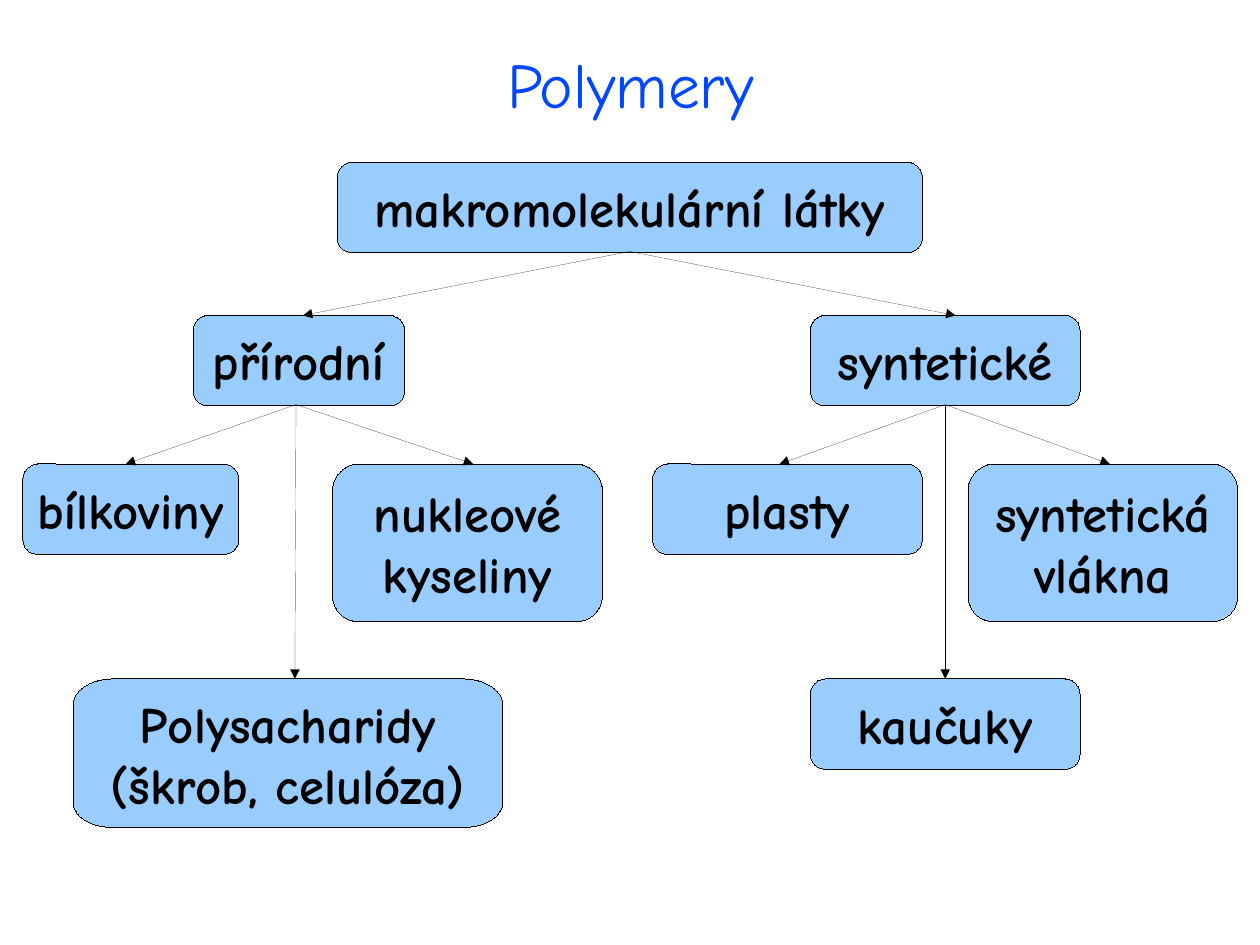
from math import cos, pi, sin

from lxml.etree import SubElement
from pptx import Presentation
from pptx.dml.color import RGBColor
from pptx.enum.shapes import MSO_CONNECTOR, MSO_SHAPE
from pptx.enum.text import MSO_ANCHOR, PP_ALIGN
from pptx.oxml.ns import qn
from pptx.util import Cm, Inches, Pt

# Content
TITLE = "Polymery"
# Each box: lines of text, left, top, width, height
BOXES = [
    (["makromolekulární látky"], 2.95, 1.42, 5.12, 0.79),
    (["přírodní"], 1.69, 2.76, 1.85, 0.79),
    (["syntetické"], 7.09, 2.76, 2.36, 0.79),
    (["syntetická", "vlákna"], 8.47, 4.06, 2.36, 1.38),
    (["plasty"], 5.71, 4.06, 2.36, 0.79),
    (["nukleové", "kyseliny"], 2.91, 4.06, 2.36, 1.38),
    (["bílkoviny"], 0.2, 4.06, 1.89, 0.79),
    (["kaučuky"], 7.09, 5.94, 2.36, 0.79),
]
WIDE_BOX = (["Polysacharidy", "(škrob, celulóza)"], 0.64, 5.94, 3.76, 1.3)
WIDE_CORNER = (0.35, 0.22)
# Each fan of arrows: start point, then the tips
ARROWS = [
    ((5.51, 2.2), [(8.36, 2.76), (2.65, 2.76)]),
    ((2.59, 3.54), [(2.58, 5.94), (4.14, 4.06), (1.1, 4.06)]),
    ((8.27, 3.54), [(8.27, 5.94), (6.82, 4.06), (9.71, 4.06)]),
]
FONT = "Comic Neue"
COLORS = {"title": "0047FF", "box": "99CCFF", "ink": "000000"}


def color(name):
    return RGBColor.from_string(COLORS[name])


def write_lines(frame, lines, size, color_name, bold, anchor):
    frame.margin_left = frame.margin_right = Inches(0.1)
    frame.margin_top = frame.margin_bottom = Inches(0.05)
    frame.vertical_anchor = anchor
    for index, line in enumerate(lines):
        paragraph = frame.add_paragraph() if index else frame.paragraphs[0]
        paragraph.alignment = PP_ALIGN.CENTER
        run = paragraph.add_run()
        run.text = line
        run.font.name = FONT
        run.font.size = Pt(size)
        run.font.bold = bold
        run.font.color.rgb = color(color_name)


def draw_hairline(shape):
    """Drop the theme style, so that the line has the default thin width."""
    shape._element.remove(shape._element.find(qn("p:style")))
    shape.line.color.rgb = color("ink")


def format_box(shape, lines):
    shape.shadow.inherit = False
    shape.fill.solid()
    shape.fill.fore_color.rgb = color("box")
    draw_hairline(shape)
    shape.text_frame.word_wrap = False
    write_lines(shape.text_frame, lines, 32, "ink", True, MSO_ANCHOR.MIDDLE)


def oval_corner_points(left, top, width, height, radius_x, radius_y, steps=12):
    """Outline of a rectangle whose corners are quarter ellipses."""
    right, bottom = left + width - radius_x, top + height - radius_y
    centers = [(right, bottom), (left + radius_x, bottom),
               (left + radius_x, top + radius_y), (right, top + radius_y)]
    points = []
    for quarter, (x, y) in enumerate(centers):
        for step in range(steps + 1):
            angle = (quarter + step / steps) * pi / 2
            points.append((Inches(x + radius_x * cos(angle)),
                           Inches(y + radius_y * sin(angle))))
    return points


def add_arrow(slide, start, tip):
    ends = [Inches(value) for value in (*start, *tip)]
    connector = slide.shapes.add_connector(MSO_CONNECTOR.STRAIGHT, *ends)
    draw_hairline(connector)
    SubElement(connector.line._get_or_add_ln(), qn("a:tailEnd"), type="triangle")
    SubElement(connector._element.spPr, qn("a:effectLst"))


def main():
    presentation = Presentation()
    presentation.slide_width = Cm(28)
    presentation.slide_height = Cm(21)
    slide = presentation.slides.add_slide(presentation.slide_layouts[5])

    # Title
    title = slide.shapes.title
    title.left, title.top = Inches(1.03), Inches(0.34)
    title.width, title.height = Inches(8.97), Inches(0.87)
    write_lines(title.text_frame, [TITLE], 40, "title", False, MSO_ANCHOR.TOP)

    # Boxes
    for lines, *place in BOXES:
        shape = slide.shapes.add_shape(
            MSO_SHAPE.ROUNDED_RECTANGLE, *[Inches(value) for value in place])
        format_box(shape, lines)

    lines, *place = WIDE_BOX
    first, *rest = oval_corner_points(*place, *WIDE_CORNER)
    builder = slide.shapes.build_freeform(*first)
    builder.add_line_segments(rest, close=True)
    format_box(builder.convert_to_shape(), lines)

    # Arrows
    for start, tips in ARROWS:
        for tip in tips:
            add_arrow(slide, start, tip)

    presentation.save("out.pptx")


if __name__ == "__main__":
    main()
